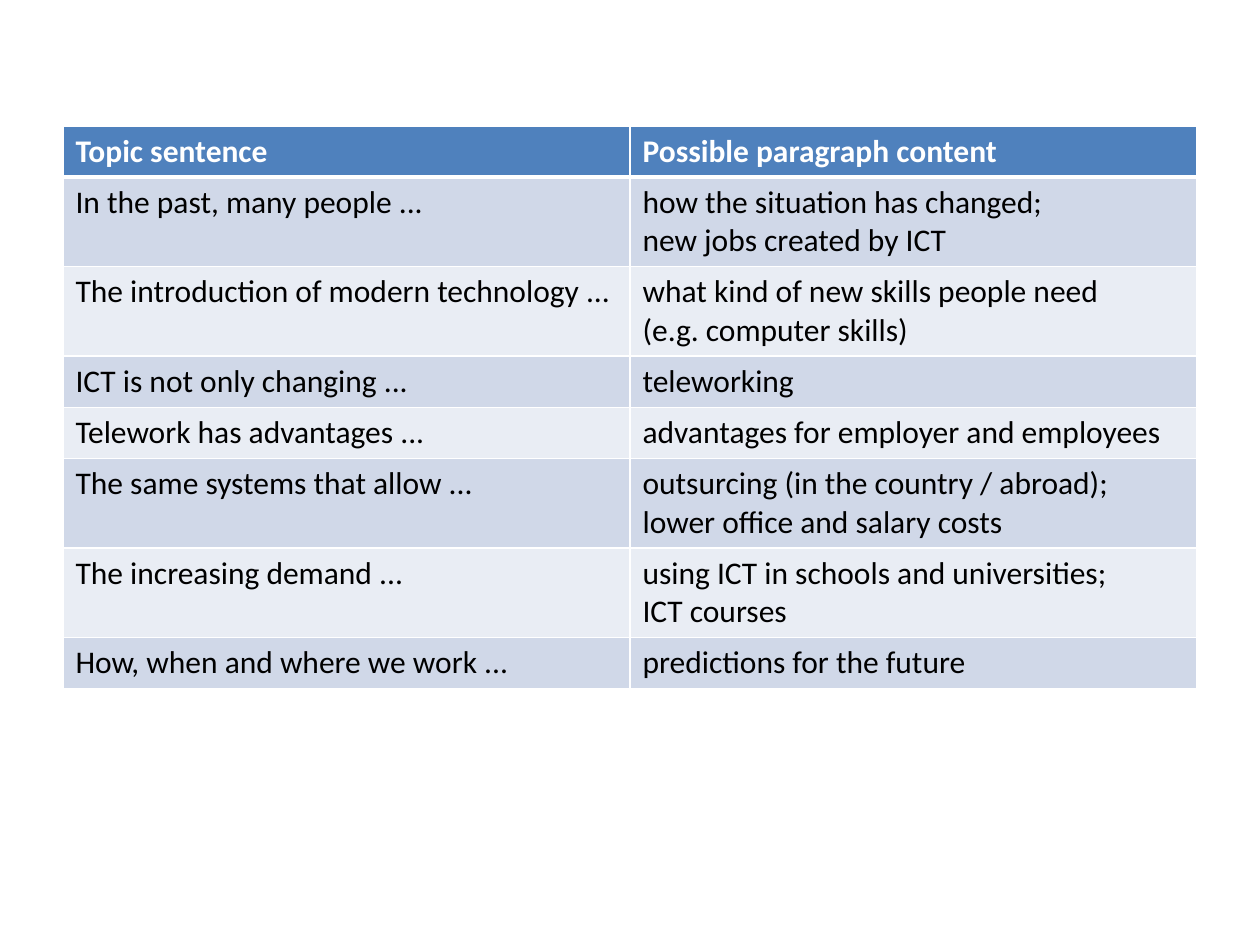
import dataclasses

import pptx
import pptx.dml.color
import pptx.oxml
import pptx.oxml.ns
import pptx.util

PX_PER_INCH = 126
LINES = [
    ("Topic sentence", "Possible paragraph content"),
    ("In the past, many people ...", "how the situation has changed;\nnew jobs created by ICT"),
    ("The introduction of modern technology ...", "what kind of new skills people need\n(e.g. computer skills)"),
    ("ICT is not only changing ...", "teleworking"),
    ("Telework has advantages ...", "advantages for employer and employees"),
    ("The same systems that allow ...", "outsurcing (in the country / abroad);\nlower office and salary costs"),
    ("The increasing demand ...", "using ICT in schools and universities;\nICT courses"),
    ("How, when and where we work ...", "predictions for the future"),
]


@dataclasses.dataclass(frozen=True)
class Theme:
    font: str = "Calibri"
    size: int = 18
    header_text: str = "FFFFFF"
    body_text: str = "000000"
    header_fill: str = "4F81BD"
    bands: tuple = ("D0D8E8", "E9EDF4")
    border: str = "FFFFFF"
    thin: int = 1
    thick: int = 3


def px(length):
    return pptx.util.Emu(round(length * 914400 / PX_PER_INCH))


def rgb(value):
    return pptx.dml.color.RGBColor.from_string(value)


class SlideBuilder:
    def __init__(self, slide, theme):
        self.slide = slide
        self.theme = theme

    def borders(self, cell, row):
        widths = dict.fromkeys("LRTB", self.theme.thin)
        if row == 0:
            widths["B"] = self.theme.thick
        elif row == 1:
            widths["T"] = self.theme.thick
        properties = cell._tc.get_or_add_tcPr()
        for side, width in widths.items():
            properties.append(pptx.oxml.parse_xml(
                f'<a:ln{side} {pptx.oxml.ns.nsdecls("a")} w="{pptx.util.Pt(width)}">'
                f'<a:solidFill><a:srgbClr val="{self.theme.border}"/></a:solidFill>'
                f'</a:ln{side}>'))

    def cell(self, cell, row, text):
        header = row == 0
        theme = self.theme
        self.borders(cell, row)
        cell.fill.solid()
        cell.fill.fore_color.rgb = rgb(theme.header_fill if header else theme.bands[(row - 1) % 2])
        cell.text = text
        style = {"name": theme.font, "size": pptx.util.Pt(theme.size), "bold": header}
        for paragraph in cell.text_frame.paragraphs:
            for run in paragraph.runs:
                for attribute, value in style.items():
                    setattr(run.font, attribute, value)
                run.font.color.rgb = rgb(theme.header_text if header else theme.body_text)

    def table(self, left, top, width, line_height, row_padding, rows):
        heights = [row_padding + line_height * (1 + max(text.count("\n") for text in row)) for row in rows]
        table = self.slide.shapes.add_table(
            len(rows), len(rows[0]), px(left), px(top), px(width), px(sum(heights))).table
        for column in table.columns:
            column.width = px(width // len(rows[0]))
        for index, (row, height) in enumerate(zip(rows, heights)):
            table.rows[index].height = px(height)
            for column, text in enumerate(row):
                self.cell(table.cell(index, column), index, text)


def main():
    presentation = pptx.Presentation()
    presentation.slide_width = px(1260)
    presentation.slide_height = px(945)
    slide = presentation.slides.add_slide(presentation.slide_layouts[6])
    builder = SlideBuilder(slide, Theme())
    builder.table(left=63, top=126, width=1134, line_height=38, row_padding=13, rows=LINES)
    presentation.save("out.pptx")


if __name__ == "__main__":
    main()
